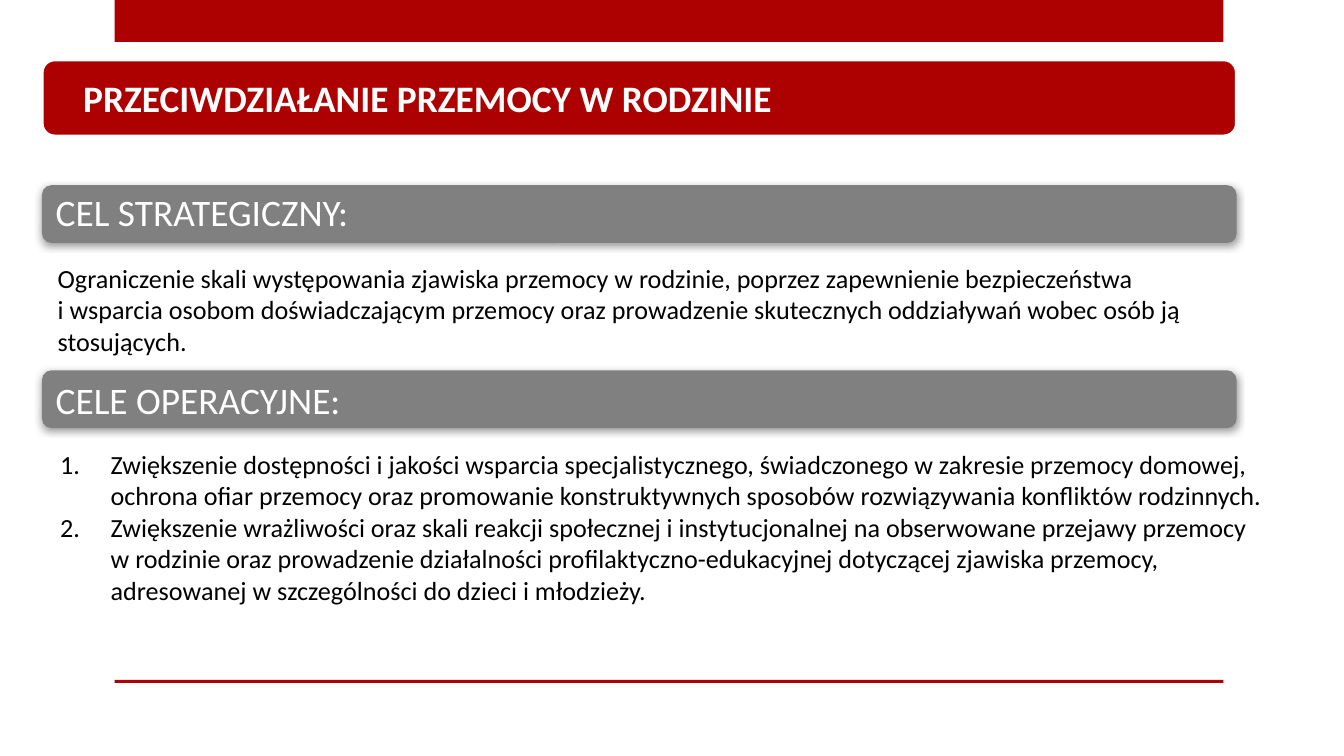
from lxml import etree
from pptx import Presentation
from pptx.dml.color import RGBColor
from pptx.enum import shapes, text
from pptx.oxml import parse_xml
from pptx.oxml.ns import nsdecls, qn
from pptx.util import Pt

# Content
TITLE = "PRZECIWDZIAŁANIE PRZEMOCY W RODZINIE"
STRATEGIC_HEADING = "CEL STRATEGICZNY:"
STRATEGIC_GOAL = (
    "Ograniczenie skali występowania zjawiska przemocy w rodzinie, "
    "poprzez zapewnienie bezpieczeństwa \v"
    "i wsparcia osobom doświadczającym przemocy oraz prowadzenie "
    "skutecznych oddziaływań wobec osób ją stosujących."
)
OPERATIONAL_HEADING = "CELE OPERACYJNE:"
OPERATIONAL_GOALS = [
    "Zwiększenie dostępności i jakości wsparcia specjalistycznego, "
    "świadczonego w zakresie przemocy domowej, ochrona ofiar przemocy oraz "
    "promowanie konstruktywnych sposobów rozwiązywania konfliktów rodzinnych.",
    "Zwiększenie wrażliwości oraz skali reakcji społecznej i instytucjonalnej "
    "na obserwowane przejawy przemocy w rodzinie oraz prowadzenie działalności "
    "profilaktyczno-edukacyjnej dotyczącej zjawiska przemocy, adresowanej "
    "w szczególności do dzieci i młodzieży.",
]

THEME = {
    "font": "Calibri",
    "red": RGBColor(0xAD, 0x01, 0x01),
    "gray": RGBColor(0x80, 0x80, 0x80),
    "white": RGBColor(0xFF, 0xFF, 0xFF),
    "black": RGBColor(0, 0, 0),
    "heading": 20,
    "body": 14,
}

# Layout, in points
SLIDE_W, SLIDE_H = 720, 405
RULE_X, RULE_W = 61.4, 594
BAR_X, BAR_W = 22.5, 640
HEADING_H = 31
TEXT_X = 23.8
NUMBER_INDENT = 27


def add_bar(s, kind, x, y, w, h, color):
    sp = s.shapes.add_shape(kind, Pt(x), Pt(y), Pt(w), Pt(h))
    sp.shadow.inherit = False
    sp.fill.solid()
    sp.fill.fore_color.rgb = THEME[color]
    sp.line.fill.background()
    return sp


def add_text(s, x, y, w, h, paragraphs, size, color, bold=False, wrap=True):
    tf = s.shapes.add_textbox(Pt(x), Pt(y), Pt(w), Pt(h)).text_frame
    tf.word_wrap = wrap
    for i, content in enumerate(paragraphs):
        p = tf.add_paragraph() if i else tf.paragraphs[0]
        p.text = content
        for r in p.runs:
            r.font.name = THEME["font"]
            r.font.size = Pt(THEME[size])
            r.font.color.rgb = THEME[color]
            r.font.bold = bold
    return tf


def add_shadow(sp):
    effects = sp._element.spPr.find(qn("a:effectLst"))
    effects.append(parse_xml(
        f'<a:outerShdw {nsdecls("a")} blurRad="{Pt(4)}" dist="{Pt(1)}" '
        f'dir="{88 * 60000}" rotWithShape="0"><a:srgbClr val="000000">'
        '<a:alpha val="40000"/></a:srgbClr></a:outerShdw>'))


def add_heading(s, y, text_y, label):
    sp = add_bar(s, shapes.MSO_SHAPE.ROUNDED_RECTANGLE,
                 BAR_X, y, BAR_W, HEADING_H, "gray")
    add_shadow(sp)
    tf = add_text(s, TEXT_X, text_y, 636.5, 28, [label], "heading", "white")
    tf.vertical_anchor = text.MSO_ANCHOR.MIDDLE
    tf.margin_left = tf.margin_right = Pt(6)
    tf.margin_top = tf.margin_bottom = Pt(6)
    tf.paragraphs[0].line_spacing = 0.9


def number_paragraphs(tf):
    for p in tf.paragraphs:
        pPr = p._p.get_or_add_pPr()
        pPr.set("marL", str(Pt(NUMBER_INDENT)))
        pPr.set("indent", str(-Pt(NUMBER_INDENT)))
        etree.SubElement(pPr, qn("a:buFont"), typeface="+mj-lt")
        etree.SubElement(pPr, qn("a:buAutoNum"), type="arabicPeriod")


def main():
    prs = Presentation()
    prs.slide_width, prs.slide_height = Pt(SLIDE_W), Pt(SLIDE_H)
    s = prs.slides.add_slide(prs.slide_layouts[6])

    # Top band and bottom rule
    for y, h in [(0, 22.5), (364.3, 1.6)]:
        add_bar(s, shapes.MSO_SHAPE.RECTANGLE, RULE_X, y, RULE_W, h, "red")

    # Strategic goal
    add_heading(s, 99.2, 100.8, STRATEGIC_HEADING)
    add_text(s, TEXT_X, 136.9, 617, 58, [STRATEGIC_GOAL], "body", "black")

    # Operational goals
    add_heading(s, 198.4, 201.6, OPERATIONAL_HEADING)
    tf = add_text(s, 25.2, 236.7, 659, 109, OPERATIONAL_GOALS, "body", "black")
    number_paragraphs(tf)

    # Title
    sp = add_bar(s, shapes.MSO_SHAPE.ROUNDED_RECTANGLE,
                 BAR_X, 32, BAR_W, 41, "red")
    sp.line.color.rgb = THEME["white"]
    sp.line.width = Pt(1.75)
    add_text(s, 37.5, 36.7, 387, 32, [TITLE], "heading", "white",
             bold=True, wrap=False)

    prs.save("out.pptx")


if __name__ == "__main__":
    main()
